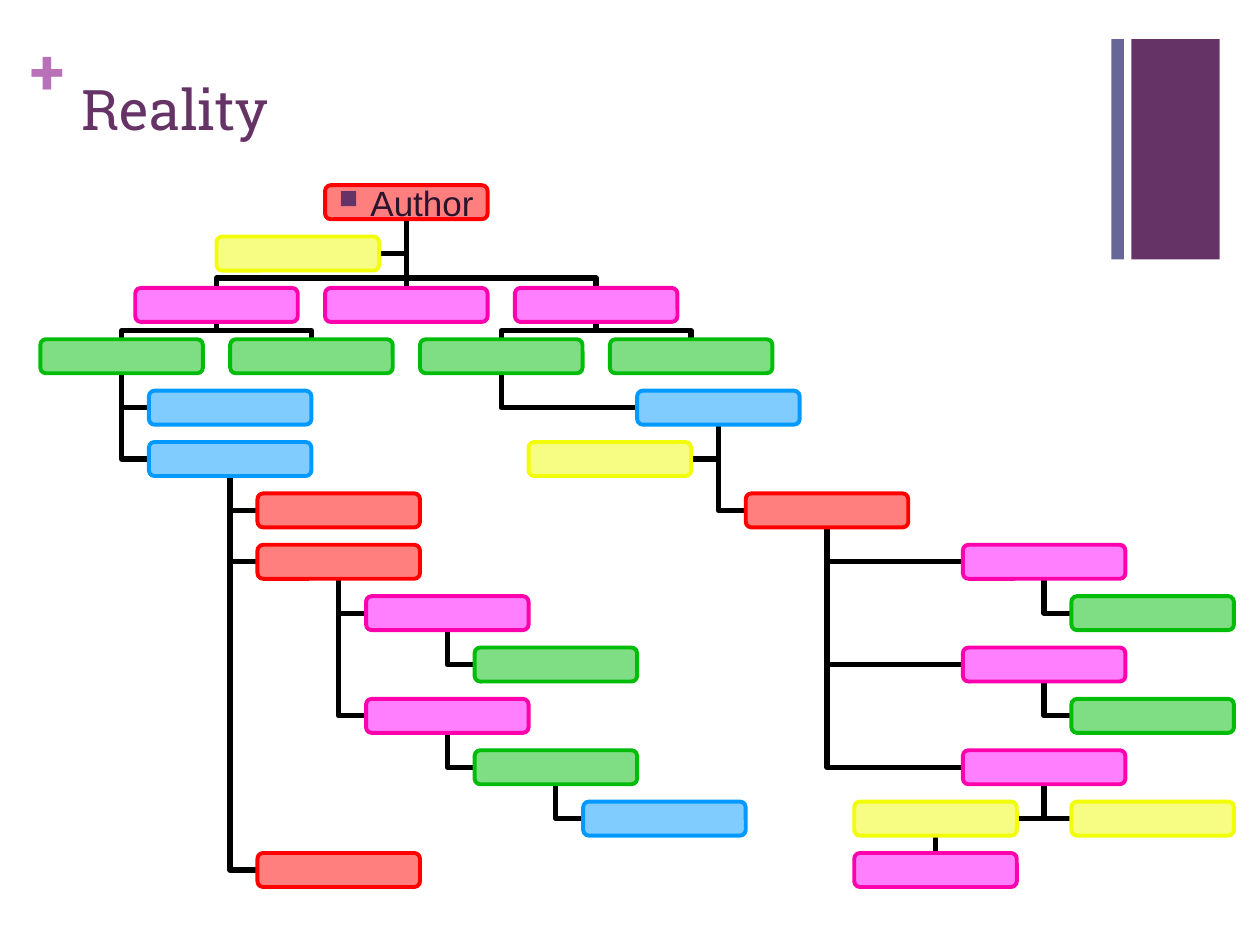
from dataclasses import dataclass

from lxml import etree
from pptx import Presentation
from pptx.dml.color import RGBColor
from pptx.enum.shapes import MSO_CONNECTOR, MSO_SHAPE
from pptx.enum.text import MSO_ANCHOR, PP_ALIGN
from pptx.oxml.ns import qn
from pptx.util import Inches, Pt

RECT, ROUND = MSO_SHAPE.RECTANGLE, MSO_SHAPE.ROUNDED_RECTANGLE
STRAIGHT, ELBOW = MSO_CONNECTOR.STRAIGHT, MSO_CONNECTOR.ELBOW
TOP, MIDDLE = MSO_ANCHOR.TOP, MSO_ANCHOR.MIDDLE
LEFT, CENTER = PP_ALIGN.LEFT, PP_ALIGN.CENTER


@dataclass(frozen=True)
class Theme:
    plum: str = "663366"
    slate: str = "666699"
    orchid: str = "B870B8"
    ink: str = "2B142D"
    wire: str = "000000"
    head: str = "Roboto Slab"
    body: str = "Arial"
    mark: str = "Wingdings"
    title: int = 32
    plus: int = 36
    label: int = 20
    edge: float = 2.25
    link: float = 3


THEME = Theme()
# Fill and border of each kind of box
TONES = {
    "red": ("FF0000", "FF0000"),
    "pink": ("FF00FF", "FF00AD"),
    "green": ("01BD0A", "01BD0A"),
    "blue": ("0399FF", "0399FF"),
    "yellow": ("F1FD09", "F1FD09"),
}

# Grid of the chart: box size, row pitch, sideways step of each link
BOX_W, BOX_H = 1.29, 0.27
PITCH = (6.77 - 1.47) / 13
STEP = {"hang": 5.17 / 6, "fork": 4.52 / 6}
BUS = 0.08  # most room between the shared bar of a fork and its boxes


def node(tone, link, step, drop, *kids):
    return tone, link, step, drop, kids


def hang(tone, step, drop, *kids):
    return node(tone, "hang", step, drop, *kids)


def fork(tone, step, drop, *kids):
    return node(tone, "fork", step, drop, *kids)


# Each box: colour, steps sideways, rows below its parent, children
CHART = node(
    "red", None, 0, 0,
    hang("yellow", -1, 1),
    fork("pink", -2, 2,
         fork("green", -1, 1,
              hang("blue", 1, 1),
              hang("blue", 1, 2,
                   hang("red", 1, 1),
                   hang("red", 1, 2,
                        hang("pink", 1, 1, hang("green", 1, 1)),
                        hang("pink", 1, 3,
                             hang("green", 1, 1, hang("blue", 1, 1)))),
                   hang("red", 1, 8))),
         fork("green", 1, 1)),
    fork("pink", 0, 2),
    fork("pink", 2, 2,
         fork("green", -1, 1,
              hang("blue", 2, 1,
                   hang("yellow", -1, 1),
                   hang("red", 1, 2,
                        hang("pink", 2, 1, hang("green", 1, 1)),
                        hang("pink", 2, 3, hang("green", 1, 1)),
                        hang("pink", 2, 5,
                             hang("yellow", -1, 1, fork("pink", 0, 1)),
                             hang("yellow", 1, 1))))),
         fork("green", 1, 1)),
)


def rgb(code):
    return RGBColor.from_string(code)


def write(shape, text, **style):
    frame = shape.text_frame
    frame.vertical_anchor = style.pop("anchor")
    inset = style.pop("inset")
    for side in ("left", "top", "right", "bottom"):
        setattr(frame, f"margin_{side}", Inches(inset if side in ("left", "right") else inset / 2))
    frame.word_wrap = style.pop("wrap")
    para = frame.paragraphs[0]
    para.alignment = style.pop("align")
    run = para.add_run()
    run.text = text
    run.font.color.rgb = rgb(style.pop("color"))
    for key, value in style.items():
        setattr(run.font, key, value)
    return para


def panel(slide, kind, box, fill):
    shape = slide.shapes.add_shape(kind, *map(Inches, box))
    shape.shadow.inherit = False
    shape.fill.solid()
    shape.fill.fore_color.rgb = rgb(fill)
    shape.line.fill.background()
    return shape


def header(slide, box):
    x, y, w, h = box
    # Corner bars
    panel(slide, RECT, (x + w - 0.7, y + 0.06, 0.7, 1.75), THEME.plum)
    panel(slide, RECT, (x + w - 0.86, y + 0.06, 0.1, 1.75), THEME.slate)
    # Plus sign and title
    plus = slide.shapes.add_textbox(*map(Inches, (x, y, 0.28, 0.61)))
    write(plus, "+", anchor=TOP, inset=0, wrap=False, align=LEFT, color=THEME.orchid,
          name=THEME.head, size=Pt(THEME.plus), bold=True)
    title = slide.shapes.add_textbox(*map(Inches, (x + 0.31, y + 0.29, 8.26, h - 0.28)))
    write(title, "Reality", anchor=TOP, inset=0.1, wrap=True, align=LEFT, color=THEME.plum,
          name=THEME.head, size=Pt(THEME.title))


def bullet(para):
    props = para._p.get_or_add_pPr()
    props.set("marL", str(Inches(0.25)))
    props.set("indent", str(Inches(-0.25)))
    color = etree.SubElement(props, qn("a:buClr"))
    etree.SubElement(color, qn("a:srgbClr"), val=THEME.plum)
    etree.SubElement(props, qn("a:buSzPct"), val="75000")
    etree.SubElement(props, qn("a:buFont"), typeface=THEME.mark, charset="2")
    etree.SubElement(props, qn("a:buChar"), char="n")  # a filled square in this font


def wire(slide, kind, start, end):
    line = slide.shapes.add_connector(kind, *map(Inches, (*start, *end)))
    line.line.color.rgb = rgb(THEME.wire)
    line.line.width = Pt(THEME.link)
    etree.SubElement(line._element.spPr, qn("a:effectLst"))
    slide.shapes._spTree.insert(2, line._element)  # keep lines behind boxes
    return line


def join(slide, link, step, kid, boss):
    (shape, x, y), (top, px, py) = kid, boss
    mid, foot = px + BOX_W / 2, py + BOX_H
    if link == "hang":  # sideways, then up to the parent
        side = x if step > 0 else x + BOX_W
        line = wire(slide, ELBOW, (side, y + BOX_H / 2), (mid, foot))
        line._element.spPr.prstGeom.set("prst", "bentConnector2")
    elif step == 0:
        line = wire(slide, STRAIGHT, (mid, y), (mid, foot))
        line.begin_connect(shape, 0)
        line.end_connect(top, 2)
    else:  # up, along the shared bar, up: an elbow turned by a quarter
        cx, cy = (x + BOX_W / 2 + mid) / 2, (y + foot) / 2
        rise, run = y - foot, abs(x - px)
        ends = [cx - rise / 2, cx + rise / 2]
        if step > 0:
            ends.reverse()
        line = wire(slide, ELBOW, (ends[0], cy - run / 2), (ends[1], cy + run / 2))
        props = line._element.spPr
        props.xfrm.set("rot", str((90 if step > 0 else 270) * 60000))
        bend = min(BUS / rise, 0.5)
        guides = props.prstGeom.get_or_add_avLst()
        etree.SubElement(guides, qn("a:gd"), name="adj1", fmla=f"val {round(bend * 100000)}")


def branch(slide, item, x, y, boss=None):
    tone, link, step, drop, kids = item
    fill, edge = TONES[tone]
    shape = panel(slide, ROUND, (x, y, BOX_W, BOX_H), fill)
    color = shape._element.spPr.find(qn("a:solidFill"))[0]
    etree.SubElement(color, qn("a:alpha"), val="50000")
    shape.line.color.rgb = rgb(edge)
    shape.line.width = Pt(THEME.edge)
    spot = shape, x, y
    if boss:
        join(slide, link, step, spot, boss)
    for kid in kids:
        way, shift, rows = kid[1:4]
        branch(slide, kid, x + STEP[way] * shift, y + PITCH * rows, spot)
    return shape


def main():
    deck = Presentation()
    deck.slide_width, deck.slide_height = Inches(10), Inches(7.5)
    slide = deck.slides.add_slide(deck.slide_layouts[6])
    header(slide, (0.24, 0.25, 9.44, 1.5))
    # Chart, from its topmost box down
    root = branch(slide, CHART, 2.58, 1.47)
    bullet(write(root, "Author", anchor=MIDDLE, inset=0, wrap=False, align=CENTER,
                 color=THEME.ink, name=THEME.body, size=Pt(THEME.label)))
    deck.save("out.pptx")


if __name__ == "__main__":
    main()
